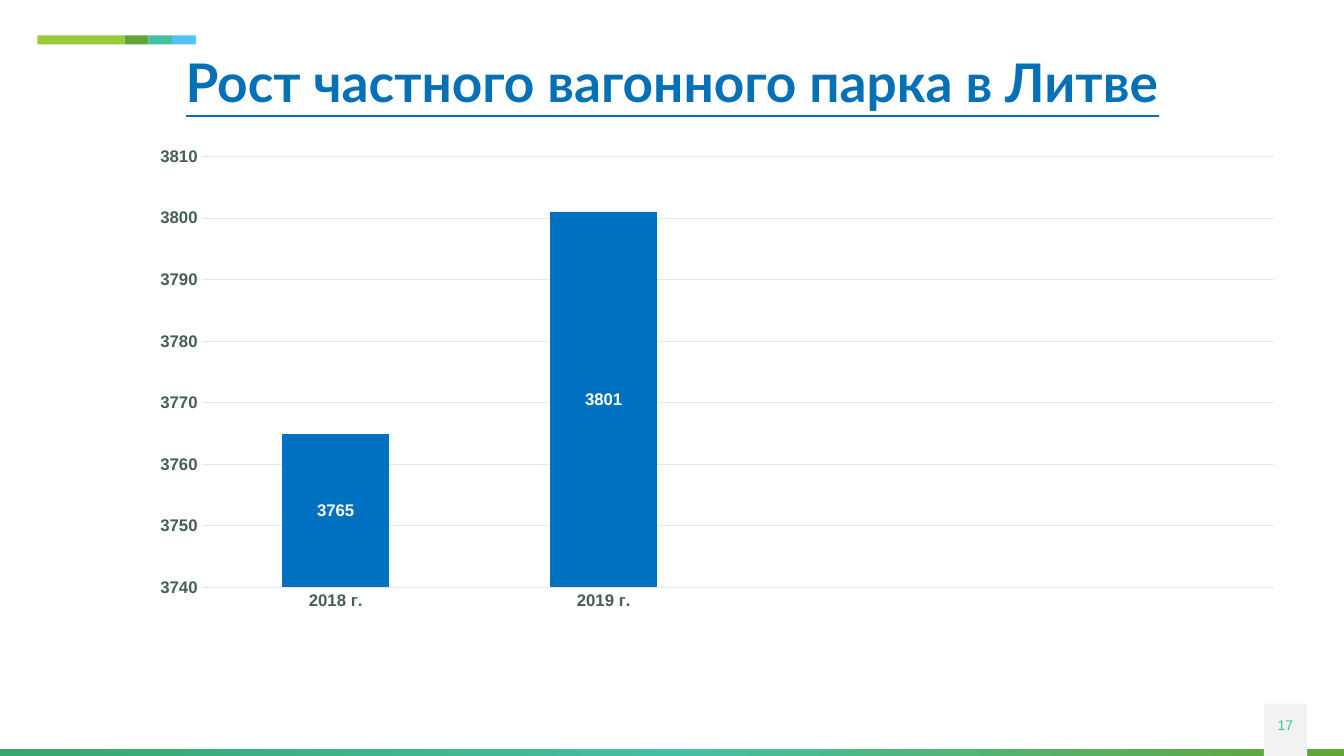
from copy import deepcopy

from lxml import etree
from pptx import Presentation
from pptx.chart.data import CategoryChartData
from pptx.dml.color import RGBColor
from pptx.enum.chart import XL_CHART_TYPE, XL_LABEL_POSITION, XL_TICK_MARK
from pptx.enum.shapes import MSO_SHAPE
from pptx.enum.text import MSO_ANCHOR, MSO_AUTO_SIZE, PP_ALIGN
from pptx.oxml.ns import qn
from pptx.util import Cm, Pt

WHITE = RGBColor(0xFF, 0xFF, 0xFF)
TITLE_BLUE = RGBColor(0x04, 0x71, 0xB7)
COLUMN_BLUE = RGBColor(0x00, 0x70, 0xC0)
AXIS_GREEN = RGBColor(0x45, 0x5F, 0x51)
GRID_GRAY = RGBColor(0xE1, 0xE9, 0xE5)
TILE_GRAY = RGBColor(0xF2, 0xF2, 0xF2)
LIME = RGBColor(0x99, 0xCB, 0x38)
GREEN = RGBColor(0x63, 0xA5, 0x37)
TEAL = RGBColor(0x44, 0xC1, 0xA3)
SKY = RGBColor(0x51, 0xC3, 0xF9)
EMERALD = RGBColor(0x37, 0xA7, 0x6F)


def format_font(font, name="Arial", size=12, color=AXIS_GREEN, bold=False, underline=False):
    font.name = name
    font.size = Pt(size)
    font.color.rgb = color
    font.bold = bold
    font.underline = underline


def write_text(text_frame, text, line_spacing=1.0, **font_format):
    paragraph = text_frame.paragraphs[0]
    paragraph.alignment = PP_ALIGN.CENTER
    paragraph.line_spacing = line_spacing
    run = paragraph.add_run()
    run.text = text
    format_font(run.font, **font_format)


class SlideBuilder:
    """Holds the current slide and its style."""

    text_font = "Arial"
    title_font = "Lato"

    def __init__(self, presentation):
        self.slide = presentation.slides.add_slide(presentation.slide_layouts[5])

    def rectangle(self, left, top, width, height, color=None):
        shape = self.slide.shapes.add_shape(
            MSO_SHAPE.RECTANGLE, Cm(left), Cm(top), Cm(width), Cm(height))
        shape.shadow.inherit = False
        shape.line.fill.background()
        if color is not None:
            shape.fill.solid()
            shape.fill.fore_color.rgb = color
        return shape

    def gradient_bar(self, left, top, width, height, stops):
        shape = self.rectangle(left, top, width, height)
        shape.fill.gradient()
        shape.fill.gradient_angle = 0
        stop_list = shape.element.spPr.find(".//" + qn("a:gsLst"))
        while len(stop_list) < len(stops):
            stop_list.append(deepcopy(stop_list[0]))
        for stop, (position, color) in zip(shape.fill.gradient_stops, stops):
            stop.position = position
            stop.color.rgb = color

    def title(self, text, left, top, width, height):
        shape = self.slide.shapes.title
        shape.left, shape.top, shape.width, shape.height = map(Cm, (left, top, width, height))
        frame = shape.text_frame
        frame.margin_left = frame.margin_right = frame.margin_top = frame.margin_bottom = 0
        frame.vertical_anchor = MSO_ANCHOR.TOP
        frame.word_wrap = True
        frame.auto_size = MSO_AUTO_SIZE.SHAPE_TO_FIT_TEXT
        write_text(frame, text, line_spacing=0.9, name=self.title_font, size=38,
                   color=TITLE_BLUE, bold=True, underline=True)

    def page_number(self, text, left, top, width, height):
        box = self.slide.shapes.add_textbox(Cm(left), Cm(top), Cm(width), Cm(height))
        box.text_frame.word_wrap = True
        box.text_frame.margin_left = box.text_frame.margin_right = 0
        write_text(box.text_frame, text, name=self.text_font, size=10, color=TEAL)

    def column_chart(self, categories, values, left, top, width, height):
        data = CategoryChartData()
        data.categories = categories
        data.add_series("Series 1", values)
        chart = self.slide.shapes.add_chart(
            XL_CHART_TYPE.COLUMN_STACKED, Cm(left), Cm(top), Cm(width), Cm(height), data).chart
        chart.has_legend = False
        chart.has_title = False
        chart.font.name = self.text_font
        chart.font.size = Pt(10)

        # Columns and their labels
        plot = chart.plots[0]
        plot.gap_width = 150
        plot.overlap = 100
        plot.vary_by_categories = False
        series = plot.series[0]
        series.format.fill.solid()
        series.format.fill.fore_color.rgb = COLUMN_BLUE
        labels = series.data_labels
        labels.show_value = True
        labels.position = XL_LABEL_POSITION.CENTER
        format_font(labels.font, self.text_font, color=WHITE, bold=True)

        # Axes
        value_axis = chart.value_axis
        value_axis.minimum_scale = 3740
        value_axis.maximum_scale = 3810
        value_axis.major_unit = 10
        value_axis.format.line.fill.background()
        for axis in (chart.category_axis, value_axis):
            axis.major_tick_mark = axis.minor_tick_mark = XL_TICK_MARK.NONE
            format_font(axis.tick_labels.font, self.text_font, bold=True)
        for line in (chart.category_axis.format.line, value_axis.major_gridlines.format.line):
            line.color.rgb = GRID_GRAY
            line.width = Pt(0.75)
        self.place_plot(chart, x=0.047, y=0.02, w=0.925, h=0.913)

    @staticmethod
    def place_plot(chart, **fractions):
        plot_area = chart.element.find(".//" + qn("c:plotArea"))
        layout = plot_area.find(qn("c:layout"))
        if layout is None:
            layout = etree.Element(qn("c:layout"))
            plot_area.insert(0, layout)
        manual = etree.SubElement(layout, qn("c:manualLayout"))
        settings = {"layoutTarget": "inner", "xMode": "edge", "yMode": "edge", **fractions}
        for tag, value in settings.items():
            etree.SubElement(manual, qn("c:" + tag)).set("val", str(value))


def main():
    presentation = Presentation()
    presentation.slide_width = Cm(33.87)
    presentation.slide_height = Cm(19.05)
    builder = SlideBuilder(presentation)

    # Footer bar and page tile
    builder.gradient_bar(0, 18.87, 33.87, 0.18, [(0, EMERALD), (0.51, TEAL), (1, GREEN)])
    builder.rectangle(31.85, 17.73, 1.09, 1.32, TILE_GRAY)
    builder.page_number("17", 31.85, 17.93, 1.09, 1.02)

    # Accent strip above the title
    left = 0.94
    for width, color in [(2.2, LIME), (0.6, GREEN), (0.6, TEAL), (0.6, SKY)]:
        builder.rectangle(left, 0.89, width, 0.23, color)
        left += width

    # Title and chart; two category places stay empty
    builder.title("Рост частного вагонного парка в Литве", 0.94, 1.42, 32, 1.47)
    builder.column_chart(["2018 г.", "2019 г.", "", ""], [3765, 3801, None, None],
                         3.71, 3.71, 29.21, 11.89)
    presentation.save("out.pptx")


if __name__ == "__main__":
    main()
